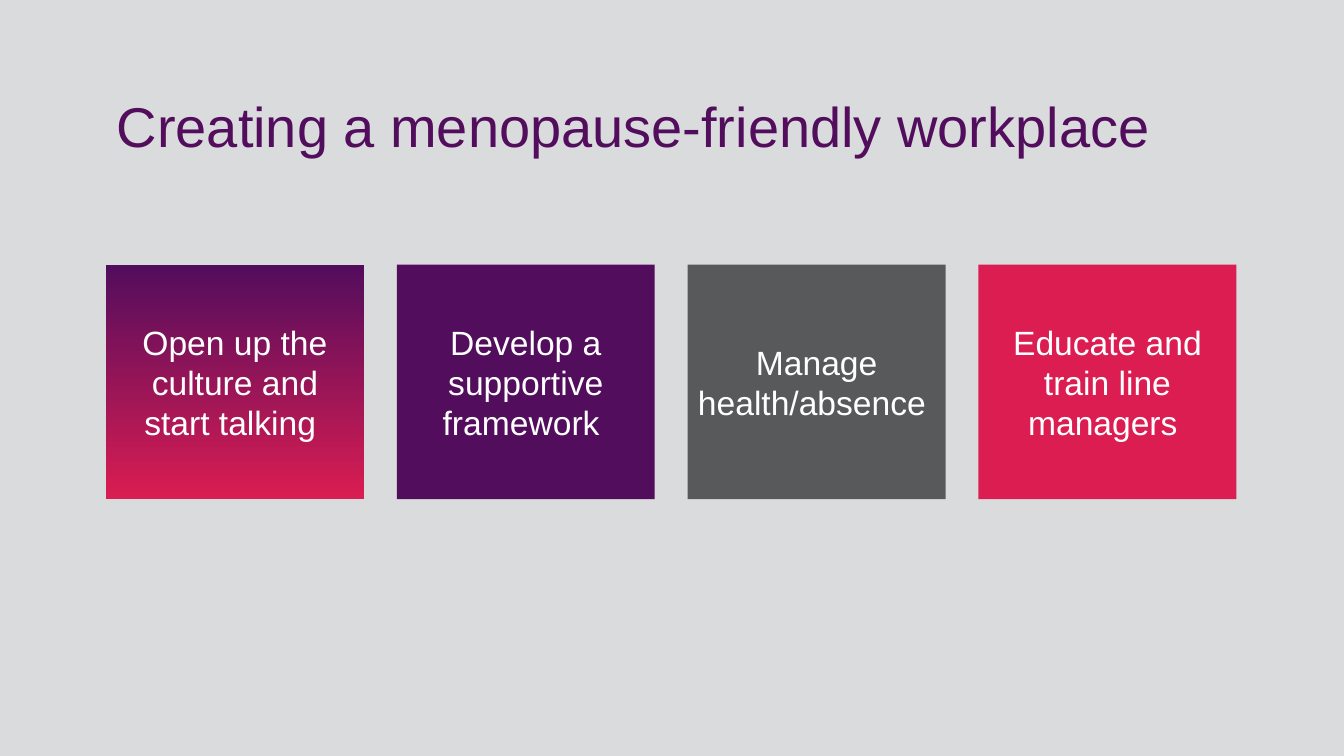
from dataclasses import dataclass

from pptx import Presentation
from pptx.dml.color import RGBColor
from pptx.enum.shapes import MSO_SHAPE
from pptx.enum.text import MSO_ANCHOR, MSO_AUTO_SIZE, PP_ALIGN
from pptx.util import Cm, Pt


@dataclass(frozen=True)
class Theme:
    font: str = "Arial"
    background: str = "DADBDC"
    purple: str = "520D5D"
    grey: str = "58595B"
    red: str = "DB1D52"
    gradient_end: str = "DA1D52"
    white: str = "FFFFFF"
    title_size: int = 40
    step_size: int = 24


THEME = Theme()

# Content: each step with its fill colours (two make a gradient)
TITLE = "Creating a menopause-friendly workplace"
STEPS = [
    ("Open up the culture and start talking ", (THEME.purple, THEME.gradient_end)),
    ("Develop a supportive framework ", (THEME.purple,)),
    ("Manage health/absence ", (THEME.grey,)),
    ("Educate and train line managers ", (THEME.red,)),
]

# Layout in centimetres
ROW_LEFT, ROW_TOP = 2.67, 6.67
STEP_WIDTH, STEP_HEIGHT, STEP_GAP = 6.5, 5.91, 0.83


def write_text(shape, text, *, size, color, align, anchor):
    frame = shape.text_frame
    frame.word_wrap = True
    frame.auto_size = MSO_AUTO_SIZE.NONE
    frame.vertical_anchor = anchor
    paragraph = frame.paragraphs[0]
    paragraph.alignment = align
    run = paragraph.add_run()
    run.text = text
    run.font.name = THEME.font
    run.font.size = Pt(size)
    run.font.color.rgb = RGBColor.from_string(color)


def fill_shape(shape, colors):
    if len(colors) == 1:
        shape.fill.solid()
        shape.fill.fore_color.rgb = RGBColor.from_string(colors[0])
        return
    shape.fill.gradient()
    shape.fill.gradient_angle = 270
    for stop, color, position in zip(shape.fill.gradient_stops, colors, (0, 1)):
        stop.color.rgb = RGBColor.from_string(color)
        stop.position = position


def main():
    presentation = Presentation()
    presentation.slide_width, presentation.slide_height = Cm(33.87), Cm(19.05)
    slide = presentation.slides.add_slide(presentation.slide_layouts[5])
    slide.background.fill.solid()
    slide.background.fill.fore_color.rgb = RGBColor.from_string(THEME.background)

    # Title
    title = slide.shapes.title
    title.left, title.top = Cm(2.69), Cm(2.18)
    title.width, title.height = Cm(30.15), Cm(1.96)
    write_text(title, TITLE, size=THEME.title_size, color=THEME.purple,
               align=PP_ALIGN.LEFT, anchor=MSO_ANCHOR.TOP)

    # Row of steps
    for index, (text, colors) in enumerate(STEPS):
        left = ROW_LEFT + index * (STEP_WIDTH + STEP_GAP)
        step = slide.shapes.add_shape(MSO_SHAPE.RECTANGLE, Cm(left), Cm(ROW_TOP),
                                      Cm(STEP_WIDTH), Cm(STEP_HEIGHT))
        step.shadow.inherit = False
        step.line.fill.background()
        fill_shape(step, colors)
        write_text(step, text, size=THEME.step_size, color=THEME.white,
                   align=PP_ALIGN.CENTER, anchor=MSO_ANCHOR.MIDDLE)

    presentation.save("out.pptx")


if __name__ == "__main__":
    main()
